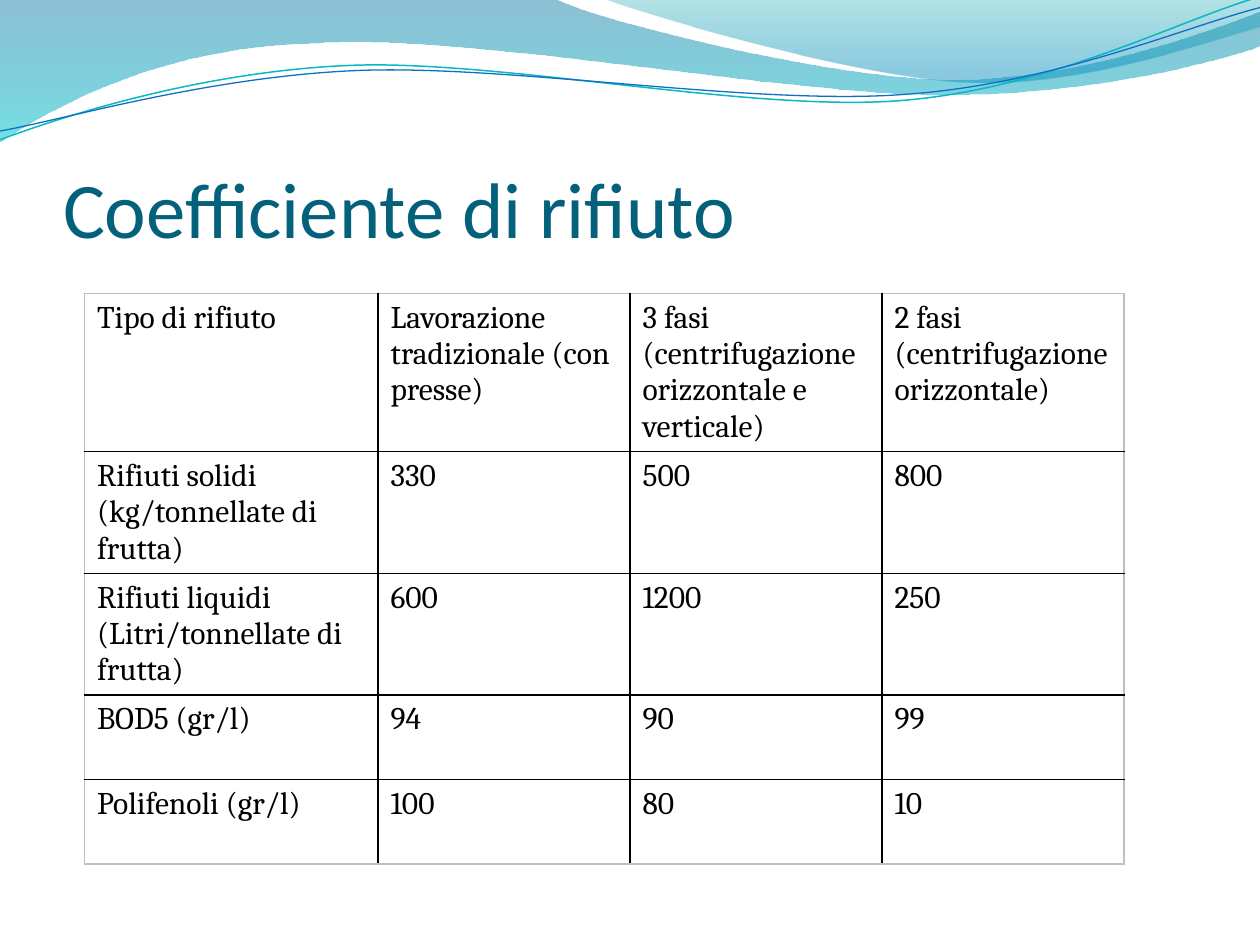
from dataclasses import dataclass
from math import cos, radians, sin

from lxml.etree import SubElement
from pptx import Presentation
from pptx.dml.color import RGBColor as RGB
from pptx.enum.text import MSO_ANCHOR as ANCHOR, MSO_AUTO_SIZE as AUTO, PP_ALIGN as ALIGN
from pptx.oxml import parse_xml
from pptx.oxml.ns import nsdecls, qn
from pptx.util import Inches, Pt


@dataclass(frozen=True)
class Theme:
    """Colours, fonts and type sizes of the slide."""
    title: str = "04617B"
    text: str = "000000"
    grid: str = "000000"
    frame: str = "BFBFBF"
    teal: str = "0AB8BF"
    blue: str = "0F6FC6"
    title_font: str = "Calibri"
    body_font: str = "Cambria"
    title_size: int = 45
    body_size: int = 18


THEME = Theme()
TILT = -2.7

BANDS = [
    ((-0.01, -0.01, 10.02, 1.14),
     [(0, 0), (4.4, -0.01), (4.76, 0.17, 6.64, 0.63, 7.58, 0.63),
      (8.53, 0.63, 9.58, 0.26, 10, 0.09), (10.01, 0.36),
      (9.83, 0.44, 8.7, 0.76, 7.46, 0.75), (6.22, 0.75, 3.82, 0.28, 2.57, 0.34),
      (1.29, 0.36, 0.46, 0.83, -0.01, 1.13), (0, 0)],
     [(0, "0074A1", 45), (100, "00C6CF", 55)]),
    ((4.79, -0.01, 5.21, 0.7),
     [(4.79, -0.01), (5.09, 0.11, 6.82, 0.62, 7.69, 0.65),
      (8.56, 0.69, 9.61, 0.32, 10, 0.21), (10, 0), (4.79, -0.01)],
     [(0, "00A1A9", 30), (80, "008BBF", 45)]),
]
STROKES = [
    ((-0.02, 0.22, 10.02, 0.71),
     [(0, 1.11), (0.48, 0.93, 1.58, 0.57, 2.77, 0.52),
      (3.95, 0.47, 5.93, 0.89, 7.13, 0.8), (8.33, 0.71, 9.38, 0.15, 9.98, -0.02)],
     THEME.teal, 0.85),
    ((-0.02, 0.3, 10.03, 0.58),
     [(0, 1.04), (0.47, 0.96, 1.64, 0.61, 2.83, 0.56),
      (4.03, 0.51, 5.97, 0.84, 7.17, 0.75), (8.36, 0.67, 9.41, 0.21, 10, 0.06)],
     THEME.blue, 0.75),
]

COL_WIDTHS = [2.33, 2, 2, 1.92]
ROW_HEIGHT = 0.67
TABLE_HEIGHT = 4.64
ROWS = [
    ["Tipo di rifiuto", "Lavorazione tradizionale (con presse)",
     "3 fasi (centrifugazione orizzontale e verticale)",
     "2 fasi (centrifugazione orizzontale)"],
    ["Rifiuti solidi\n(kg/tonnellate di frutta)", "330", "500", "800"],
    ["Rifiuti liquidi (Litri/tonnellate di frutta)", "600", "1200", "250"],
    ["BOD5 (gr/l)", "94", "90", "99"],
    ["Polifenoli (gr/l)", "100", "80", "10"],
]


def to_local(x, y, box, tilt):
    """Return a slide point in the frame of a box turned by tilt degrees."""
    left, top, width, height = box
    dx, dy = x - left - width / 2, y - top - height / 2
    a = radians(-tilt)
    return (Inches(dx * cos(a) - dy * sin(a) + width / 2),
            Inches(dx * sin(a) + dy * cos(a) + height / 2))


def add_wave(s, box, steps, tilt=0, close=False):
    """Add a freeform of straight (x, y) and cubic steps."""
    ends = [(Inches(step[-2]), Inches(step[-1])) for step in steps]
    builder = s.shapes.build_freeform(*ends[0])
    builder.add_line_segments(ends[1:], close=close)
    sp = builder.convert_to_shape()
    sp.left, sp.top, sp.width, sp.height = map(Inches, box)
    sp.rotation = tilt
    sp.shadow.inherit = False
    outline = next(sp.element.iter(qn("a:path")))
    outline.set("w", str(sp.width))
    outline.set("h", str(sp.height))
    for node, step in zip(list(outline), steps):
        if len(step) == 6:
            curve = SubElement(outline, qn("a:cubicBezTo"))
            outline.replace(node, curve)
            node = curve
        for pt in list(node):
            node.remove(pt)
        for x, y in zip(step[::2], step[1::2]):
            px, py = to_local(x, y, box, tilt)
            SubElement(node, qn("a:pt"), x=str(px), y=str(py))
    return sp


def add_band(s, box, steps, stops):
    """Add a closed wave with a translucent vertical gradient."""
    sp = add_wave(s, box, steps, close=True)
    sp.line.fill.background()
    marks = "".join(
        f'<a:gs pos="{pos * 1000}"><a:srgbClr val="{color}">'
        f'<a:alpha val="{alpha * 1000}"/></a:srgbClr></a:gs>'
        for pos, color, alpha in stops)
    grad = parse_xml(f'<a:gradFill {nsdecls("a")}><a:gsLst>{marks}</a:gsLst>'
                     '<a:lin ang="5400000" scaled="0"/></a:gradFill>')
    sp.element.spPr.find(qn("a:custGeom")).addnext(grad)


def add_stroke(s, box, steps, color, width):
    """Add an open, tilted wave line."""
    sp = add_wave(s, box, steps, TILT)
    sp.fill.background()
    sp.line.color.rgb = RGB.from_string(color)
    sp.line.width = Pt(width)


def add_run(p, text, font, size, color):
    """Add a formatted run to a paragraph."""
    r = p.add_run()
    r.text = text
    r.font.name = font
    r.font.size = Pt(size)
    r.font.color.rgb = RGB.from_string(color)


def set_title(s, text):
    """Place and format the title placeholder above the waves."""
    sp = s.shapes.title
    sp.left, sp.top, sp.width, sp.height = map(Inches, (0.5, 1.25, 9, 0.77))
    tf = sp.text_frame
    tf.auto_size = AUTO.NONE
    tf.word_wrap = True
    tf.vertical_anchor = ANCHOR.BOTTOM
    tf.margin_left = tf.margin_right = tf.margin_bottom = 0
    tf.margin_top = Inches(0.05)
    p = tf.paragraphs[0]
    p.alignment = ALIGN.LEFT
    add_run(p, text, THEME.title_font, THEME.title_size, THEME.title)
    s.shapes.element.append(sp.element)


def set_borders(cell, outer):
    """Give a cell its four borders, grey where the table ends."""
    props = cell._tc.get_or_add_tcPr()
    for side, is_outer in zip(("lnL", "lnR", "lnT", "lnB"), outer):
        ln = SubElement(props, qn(f"a:{side}"), w=str(Pt(1)))
        fill = SubElement(ln, qn("a:solidFill"))
        SubElement(fill, qn("a:srgbClr"), val=THEME.frame if is_outer else THEME.grid)


def add_waste_table(s):
    """Add the table of waste coefficients."""
    n, m = len(ROWS), len(COL_WIDTHS)
    frame = s.shapes.add_table(n, m, Inches(0.67), Inches(2.33),
                               Inches(sum(COL_WIDTHS)), Inches(TABLE_HEIGHT))
    table = frame.table
    table.first_row = table.horz_banding = False
    for column, width in zip(table.columns, COL_WIDTHS):
        column.width = Inches(width)
    for i, row in enumerate(table.rows):
        row.height = Inches(ROW_HEIGHT)
        for j, cell in enumerate(row.cells):
            set_borders(cell, (j == 0, j == m - 1, i == 0, i == n - 1))
            cell.fill.background()
            tf = cell.text_frame
            for k, line in enumerate(ROWS[i][j].split("\n")):
                p = tf.add_paragraph() if k else tf.paragraphs[0]
                add_run(p, line, THEME.body_font, THEME.body_size, THEME.text)
    frame.height = Inches(TABLE_HEIGHT)


def main():
    """Build the slide and save it."""
    prs = Presentation()
    prs.slide_width, prs.slide_height = Inches(10), Inches(7.5)
    s = prs.slides.add_slide(prs.slide_layouts[5])
    for band in BANDS:
        add_band(s, *band)
    for stroke in STROKES:
        add_stroke(s, *stroke)
    set_title(s, "Coefficiente di rifiuto")
    add_waste_table(s)
    prs.save("out.pptx")


if __name__ == "__main__":
    main()
